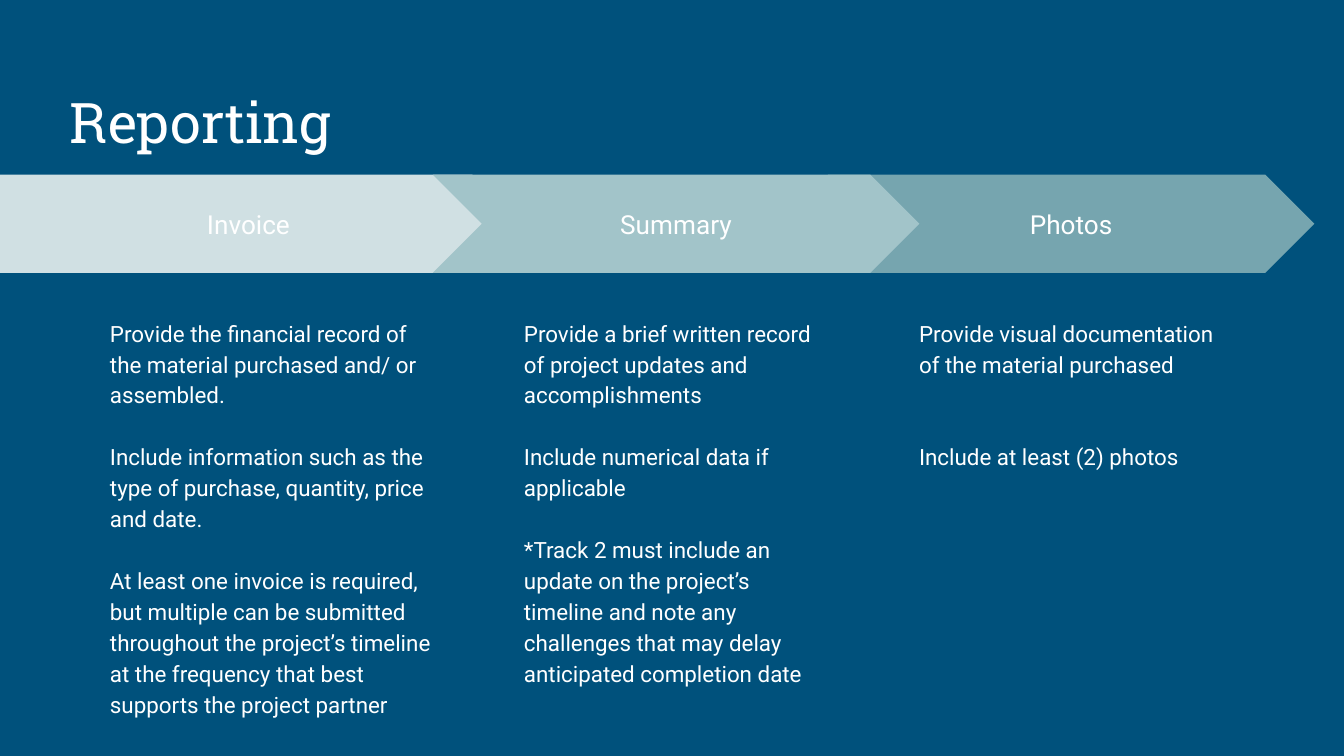
from pptx import Presentation
from pptx.dml.color import RGBColor
from pptx.enum.shapes import MSO_SHAPE
from pptx.enum.text import MSO_ANCHOR, PP_ALIGN
from pptx.util import Inches, Pt

PENTAGON, CHEVRON = MSO_SHAPE.PENTAGON, MSO_SHAPE.CHEVRON
TOP, MIDDLE, BOTTOM = MSO_ANCHOR.TOP, MSO_ANCHOR.MIDDLE, MSO_ANCHOR.BOTTOM
LEFT, CENTER = PP_ALIGN.LEFT, PP_ALIGN.CENTER

STEP = 2.94  # distance between chevrons
SECOND = 3.22  # left edge of the second step
THIRD = SECOND + STEP
TEXT_INDENT = 0.58  # from a chevron's left edge to its text column
ARROW_TOP, ARROW_HEIGHT = 1.3, 0.73
TEXT_TOP, TEXT_HEIGHT = 2.25, 2.86
BLANK_LINE = 16.6


def color(hex_value):
    return RGBColor.from_string(hex_value)


def write(shape, paragraphs, font, size, align, anchor, spacing=1.0, gap=0):
    """Fill a shape with white paragraphs, `gap` points apart."""
    frame = shape.text_frame
    frame.word_wrap = True
    frame.vertical_anchor = anchor
    frame.margin_left = frame.margin_right = Inches(0.1)
    frame.margin_top = frame.margin_bottom = Inches(0.1)
    frame.text = "\n".join(paragraphs)
    for index, paragraph in enumerate(frame.paragraphs):
        paragraph.alignment = align
        paragraph.line_spacing = spacing
        paragraph.space_before = Pt(gap if index else 0)
        paragraph.font.name = font
        paragraph.font.size = Pt(size)
        paragraph.font.color.rgb = color("FFFFFF")


presentation = Presentation()
presentation.slide_width = Inches(10)
presentation.slide_height = Inches(5.625)
slide = presentation.slides.add_slide(presentation.slide_layouts[5])
slide.background.fill.solid()
slide.background.fill.fore_color.rgb = color("00517C")

title = slide.shapes.title
title.left, title.top = Inches(0.42), Inches(0.5)
title.width, title.height = Inches(9.15), Inches(0.75)
write(title, ["Reporting"], "Roboto Slab", 30, LEFT, BOTTOM)

# Back to front: the second arrow overlaps both neighbours.
# label, shape, fill, left, width, text left, text width, blank lines, paragraphs
steps = [
    ("Photos", CHEVRON, "76A5AF", THIRD, 3.62, THIRD + TEXT_INDENT, 2.45, 2, [
        "Provide visual documentation of the material purchased",
        "Include at least (2) photos",
    ]),
    ("Invoice", PENTAGON, "D0E0E3", 0, 3.88, 0.72, 2.63, 1, [
        "Provide the financial record of the material purchased and/ or assembled.",
        "Include information such as the type of purchase, quantity, price and date.",
        "At least one invoice is required, but multiple can be submitted throughout "
        "the project’s timeline at the frequency that best supports the project partner",
    ]),
    ("Summary", CHEVRON, "A2C4C9", SECOND, 3.62, SECOND + TEXT_INDENT, 2.45, 1, [
        "Provide a brief written record of project updates and accomplishments",
        "Include numerical data if applicable",
        "*Track 2 must include an update on the project’s timeline and note any "
        "challenges that may delay anticipated completion date",
    ]),
]

for label, kind, fill, left, width, text_left, text_width, blanks, paragraphs in steps:
    arrow = slide.shapes.add_shape(
        kind, Inches(left), Inches(ARROW_TOP), Inches(width), Inches(ARROW_HEIGHT))
    arrow.adjustments[0] = 0.5
    arrow.shadow.inherit = False
    arrow.fill.solid()
    arrow.fill.fore_color.rgb = color(fill)
    arrow.line.fill.background()
    write(arrow, [label], "Roboto", 14, CENTER, MIDDLE)

    details = slide.shapes.add_textbox(
        Inches(text_left), Inches(TEXT_TOP), Inches(text_width), Inches(TEXT_HEIGHT))
    write(details, paragraphs, "Roboto", 12, LEFT, TOP, 1.15, blanks * BLANK_LINE)

presentation.save("out.pptx")
